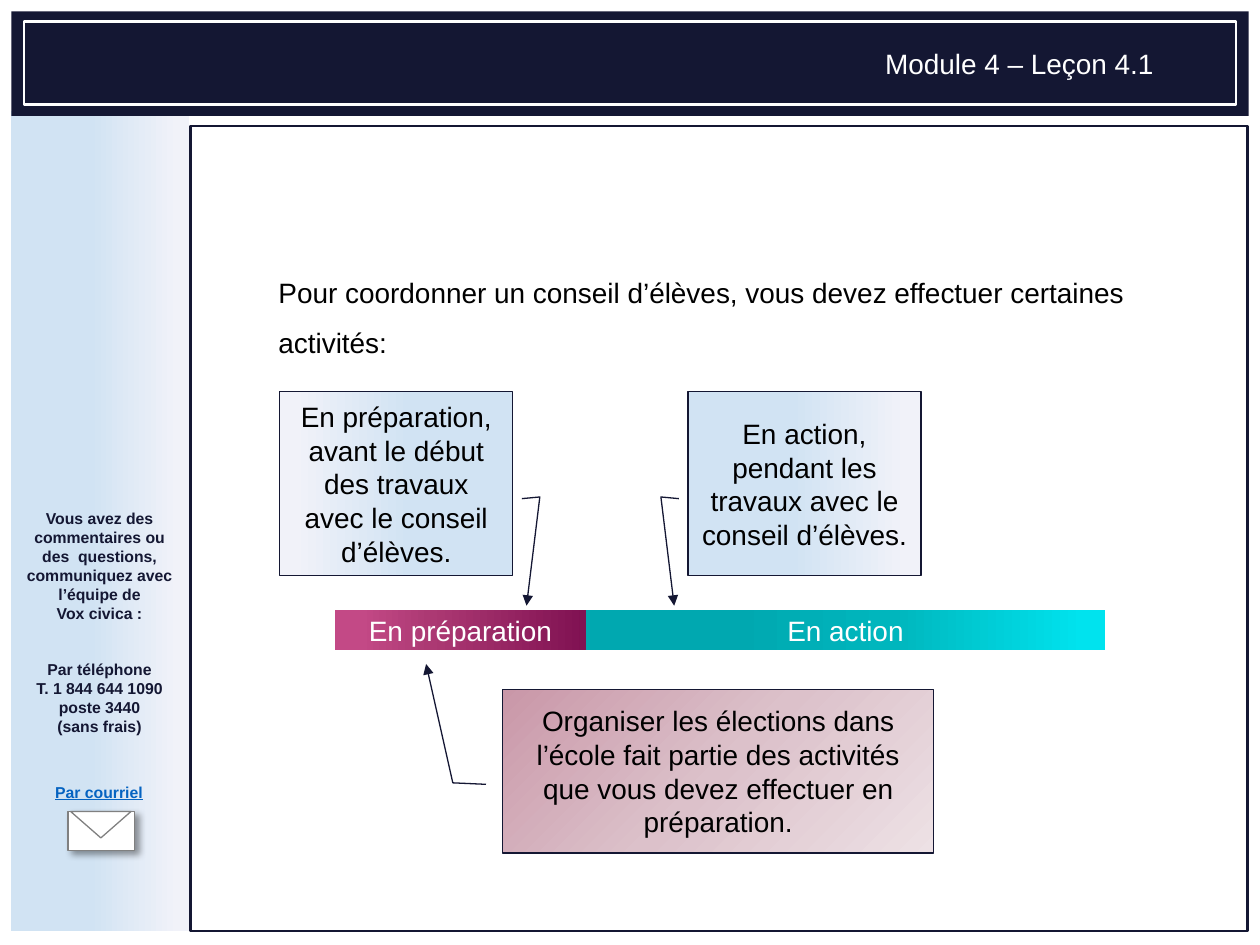
from lxml import etree
from pptx import Presentation
from pptx.dml.color import RGBColor
from pptx.enum.shapes import MSO_SHAPE
from pptx.enum.text import MSO_ANCHOR, PP_ALIGN
from pptx.oxml.ns import qn
from pptx.util import Inches, Pt

RECT = MSO_SHAPE.RECTANGLE
TRIANGLE = MSO_SHAPE.ISOSCELES_TRIANGLE
CALLOUT = MSO_SHAPE.LINE_CALLOUT_2
CENTER, LEFT = PP_ALIGN.CENTER, PP_ALIGN.LEFT
MIDDLE, TOP = MSO_ANCHOR.MIDDLE, MSO_ANCHOR.TOP

COLORS = {"navy": "141733", "white": "FFFFFF", "black": "000000",
          "gray": "808080", "link": "0563C1"}
PALE_BLUE = (180, [(6, "F1F2F9"), (56, "D1E3F3"), (99, "CEE1F2")])
ROSE = (45, [(0, "C997A8"), (50, "DCC1CA"), (100, "EDE1E5")])
MAGENTA = (180, [(0, "801152"), (62, "AC3973"), (90, "C34986")])
TEAL = (180, [(4, "00E3EE"), (41, "00B6BD"), (72, "00A8B0")])

LESSON = "Module 4 – Leçon 4.1"
INTRO = "Pour coordonner un conseil d’élèves, vous devez effectuer certaines activités:"
CONTACT = [
    ["Vous avez des commentaires ou des  questions, communiquez avec l’équipe de",
     "Vox civica :"],
    ["Par téléphone", "T. 1 844 644 1090", "poste 3440", "(sans frais)"],
]
EMAIL = "Par courriel"

LEADER_START = (0.581, -0.039, 0.572, -0.116)
TO_BAR_BELOW = LEADER_START + (1.163, -0.059)
TO_BAR_ABOVE = LEADER_START + (-0.154, -0.178)
PHASE_TOP, PHASE_W, PHASE_H = 3.11, 1.85, 1.46
CALLOUTS = [
    ("Organiser les élections dans l’école fait partie des activités que vous "
     "devez effectuer en préparation.",
     (3.99, 5.47, 3.42, 1.3), ROSE, TO_BAR_ABOVE, False),
    ("En préparation, avant le début des travaux avec le conseil d’élèves.",
     (2.22, PHASE_TOP, PHASE_W, PHASE_H), PALE_BLUE, TO_BAR_BELOW, True),
    ("En action, pendant les travaux avec le conseil d’élèves.",
     (5.46, PHASE_TOP, PHASE_W, PHASE_H), PALE_BLUE, TO_BAR_BELOW, False),
]
BAR_LEFT, BAR_TOP, BAR_H = 2.66, 4.84, 0.32
BAR = [("En préparation", 1.99, MAGENTA), ("En action", 4.12, TEAL)]


def rgb(name):
    return RGBColor.from_string(COLORS[name])


def add_gradient(shape, gradient):
    angle, stops = gradient
    grad = etree.Element(qn("a:gradFill"), rotWithShape="1")
    stop_list = etree.SubElement(grad, qn("a:gsLst"))
    for position, color in stops:
        stop = etree.SubElement(stop_list, qn("a:gs"), pos=str(position * 1000))
        etree.SubElement(stop, qn("a:srgbClr"), val=color)
    etree.SubElement(grad, qn("a:lin"), ang=str(angle * 60000), scaled="0")
    shape.element.spPr.find(qn("a:prstGeom")).addnext(grad)


def add_box(slide, kind, at, fill=None, line=None, width=0.75):
    shape = slide.shapes.add_shape(kind, *map(Inches, at))
    shape.shadow.inherit = False
    if fill is None:
        shape.fill.background()
    elif isinstance(fill, tuple):
        add_gradient(shape, fill)
    else:
        shape.fill.solid()
        shape.fill.fore_color.rgb = rgb(fill)
    if line:
        shape.line.color.rgb = rgb(line)
        shape.line.width = Pt(width)
    else:
        shape.line.fill.background()
    return shape


def write(shape, paragraphs, size, color, align=CENTER, anchor=MIDDLE,
          bold=False, underline=False, gap=0, wrap=True):
    frame = shape.text_frame
    frame.word_wrap = wrap
    frame.vertical_anchor = anchor
    for number, lines in enumerate(paragraphs):
        paragraph = frame.add_paragraph() if number else frame.paragraphs[0]
        paragraph.alignment = align
        if number:
            paragraph.space_before = Pt(gap)
        for row, text in enumerate(lines):
            if row:
                paragraph.add_line_break()
            run = paragraph.add_run()
            run.text = text
            run.font.name = "Arial"
            run.font.size = Pt(size)
            run.font.bold = bold
            run.font.underline = underline
            run.font.color.rgb = rgb(color)


def add_label(slide, at, paragraphs, size, color, **style):
    label = slide.shapes.add_textbox(*map(Inches, at))
    write(label, paragraphs, size, color, anchor=TOP, **style)


def add_frame(slide):
    add_box(slide, RECT, (0.09, 0.88, 1.41, 6.51), PALE_BLUE)
    add_box(slide, RECT, (1.51, 1, 8.39, 6.39), None, "navy", 1.5)
    add_box(slide, RECT, (0.09, 0.09, 9.82, 0.83), "navy")
    add_box(slide, RECT, (0.19, 0.17, 9.62, 0.66), None, "white", 1.5)
    add_label(slide, (6.88, 0.32, 2.42, 0.37), [[LESSON]], 16, "white")


def add_contact(slide):
    add_label(slide, (0.09, 3.99, 1.4, 1.92), CONTACT, 9, "navy", bold=True, gap=21)
    add_label(slide, (0.34, 6.16, 0.9, 0.25), [[EMAIL]], 9, "link",
              align=LEFT, bold=True, underline=True, wrap=False)
    envelope = add_box(slide, RECT, (0.54, 6.44, 0.53, 0.31), "white", "gray")
    effects = envelope.element.spPr.find(qn("a:effectLst"))
    shadow = etree.SubElement(
        effects, qn("a:outerShdw"), blurRad=str(Pt(4)), dist=str(Pt(3)),
        dir=str(45 * 60000), algn="tl", rotWithShape="0")
    tint = etree.SubElement(shadow, qn("a:srgbClr"), val=COLORS["black"])
    etree.SubElement(tint, qn("a:alpha"), val="40000")
    flap = add_box(slide, TRIANGLE, (0.56, 6.44, 0.48, 0.21), "white", "gray")
    flap.rotation = 180


def add_callout(slide, text, at, fill, leader, mirrored):
    callout = add_box(slide, CALLOUT, at, fill, "navy")
    for index, value in enumerate(leader):
        callout.adjustments[index] = value
    if mirrored:
        callout.element.spPr.find(qn("a:xfrm")).set("flipH", "1")
    outline = callout.element.spPr.find(qn("a:ln"))
    etree.SubElement(outline, qn("a:tailEnd"), type="triangle")
    write(callout, [[text]], 16, "black")


def add_bar(slide):
    left = BAR_LEFT
    for phase, width, fill in BAR:
        segment = add_box(slide, RECT, (left, BAR_TOP, width, BAR_H), fill)
        write(segment, [[phase]], 16, "white")
        left += width


def main():
    deck = Presentation()
    deck.slide_width, deck.slide_height = Inches(10), Inches(7.5)
    slide = deck.slides.add_slide(deck.slide_layouts[5])
    add_frame(slide)
    add_contact(slide)
    title = slide.shapes.title
    title.left, title.top = Inches(2.11), Inches(2)
    title.width, title.height = Inches(7.19), Inches(0.89)
    write(title, [[INTRO]], 16, "black", align=LEFT, anchor=TOP)
    title.text_frame.paragraphs[0].line_spacing = 1.5
    add_bar(slide)
    for callout in CALLOUTS:
        add_callout(slide, *callout)
    deck.save("out.pptx")


if __name__ == "__main__":
    main()
